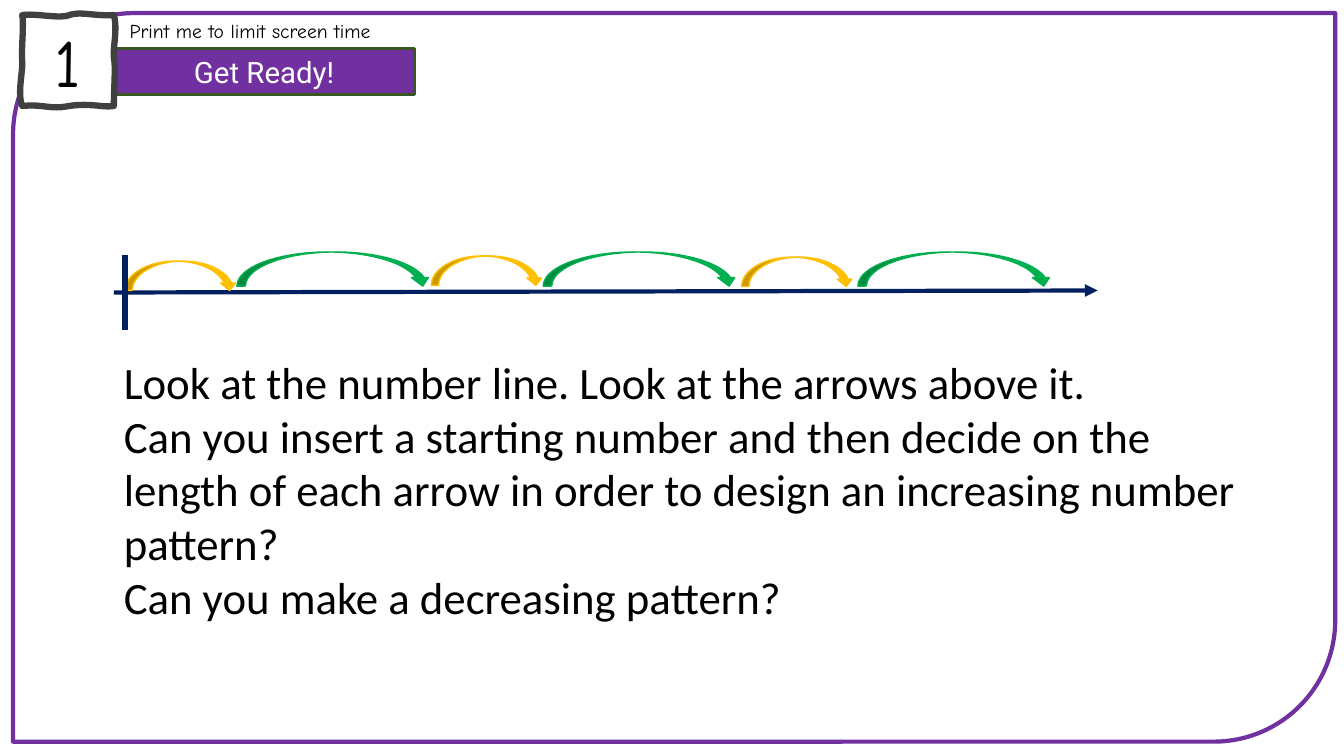
from lxml import etree
from pptx import Presentation
from pptx.dml.color import RGBColor
from pptx.enum.shapes import MSO_CONNECTOR, MSO_SHAPE
from pptx.enum.text import MSO_ANCHOR, PP_ALIGN
from pptx.oxml.ns import qn
from pptx.util import Cm, Pt

STRAIGHT = MSO_CONNECTOR.STRAIGHT
FRAME = MSO_SHAPE.ROUND_2_DIAG_RECTANGLE
RECT = MSO_SHAPE.RECTANGLE
JUMP = MSO_SHAPE.CURVED_DOWN_ARROW
CENTER, LEFT = PP_ALIGN.CENTER, PP_ALIGN.LEFT
MIDDLE = MSO_ANCHOR.MIDDLE

COLORS = {
    "purple": "7030A0",
    "dark_green": "385723",
    "charcoal": "404040",
    "navy": "002060",
    "green": "00B050",
    "amber": "FFC001",
    "white": "FFFFFF",
    "black": "000000",
}

TILE_START = (0.56, 0.38)
TILE_CURVES = [
    ((0.91, 0.33), (1.5, 0.48), (1.75, 0.38)),
    ((2.03, 0.28), (2.36, 0.41), (2.87, 0.38)),
    ((2.97, 0.74), (2.84, 1.22), (2.87, 1.45)),
    ((2.92, 1.7), (2.87, 2.13), (2.87, 2.67)),
    ((2.62, 2.72), (2.29, 2.59), (1.75, 2.67)),
    ((1.24, 2.77), (1.14, 2.62), (0.56, 2.67)),
    ((0.43, 2.36), (0.58, 1.8), (0.56, 1.55)),
    ((0.53, 1.3), (0.61, 0.61), (0.56, 0.38)),
]

SHORT, LONG = (2.82, 0.74, "amber"), (4.9, 0.86, "green")
JUMPS = [
    (3.15, 6.58, SHORT),
    (5.97, 6.35, LONG),
    (10.87, 6.45, SHORT),
    (13.69, 6.35, LONG),
    (18.69, 6.48, SHORT),
    (21.62, 6.35, LONG),
]

QUESTIONS = [
    "Look at the number line. Look at the arrows above it.",
    "Can you insert a starting number and then decide on the length of each "
    "arrow in order to design an increasing number pattern?",
    "Can you make a decreasing pattern?",
]


def bezier(a, b, c, d, t):
    u = 1 - t
    return tuple(
        Cm(u**3 * i + 3 * u * u * t * j + 3 * u * t * t * k + t**3 * m)
        for i, j, k, m in zip(a, b, c, d)
    )


class Slide:
    def __init__(self, prs):
        self.shapes = prs.slides.add_slide(prs.slide_layouts[6]).shapes

    def color(self, name):
        return RGBColor.from_string(COLORS[name])

    def style(self, s, fill, line, width):
        s.shadow.inherit = False
        if fill:
            s.fill.solid()
            s.fill.fore_color.rgb = self.color(fill)
        else:
            s.fill.background()
        s.line.color.rgb = self.color(line)
        s.line.width = Pt(width)
        return s

    def shape(self, kind, x, y, w, h, fill, line, width):
        s = self.shapes.add_shape(kind, Cm(x), Cm(y), Cm(w), Cm(h))
        return self.style(s, fill, line, width)

    def outline(self, start, curves, fill, line, width, steps=12):
        points, here = [], start
        for c1, c2, end in curves:
            points += [bezier(here, c1, c2, end, i / steps) for i in range(1, steps + 1)]
            here = end
        builder = self.shapes.build_freeform(Cm(start[0]), Cm(start[1]))
        builder.add_line_segments(points, close=True)
        return self.style(builder.convert_to_shape(), fill, line, width)

    def set_text(self, s, lines, font, size, color="black", align=LEFT):
        tf = s.text_frame
        tf.word_wrap = True
        for i, line in enumerate(lines):
            p = tf.add_paragraph() if i else tf.paragraphs[0]
            p.text = line
            p.alignment = align
            p.font.name = font
            p.font.size = Pt(size)
            p.font.color.rgb = self.color(color)

    def label(self, s, text, font, size, color):
        s.text_frame.vertical_anchor = MIDDLE
        self.set_text(s, [text], font, size, color, CENTER)

    def text(self, x, y, w, h, lines, font, size):
        s = self.shapes.add_textbox(Cm(x), Cm(y), Cm(w), Cm(h))
        self.set_text(s, lines, font, size)

    def line(self, x1, y1, x2, y2, color, width, arrow=False):
        s = self.shapes.add_connector(STRAIGHT, Cm(x1), Cm(y1), Cm(x2), Cm(y2))
        s.line.color.rgb = self.color(color)
        s.line.width = Pt(width)
        if arrow:
            ln = s._element.spPr.find(qn("a:ln"))
            etree.SubElement(ln, qn("a:tailEnd"), type="triangle")
        etree.SubElement(s._element.spPr, qn("a:effectLst"))


def main():
    prs = Presentation()
    prs.slide_width, prs.slide_height = Cm(33.87), Cm(19.05)
    slide = Slide(prs)

    slide.shape(FRAME, 0.33, 0.33, 33.32, 18.36, None, "purple", 3)
    banner = slide.shape(RECT, 2.87, 1.22, 7.57, 1.17, "purple", "dark_green", 2.25)
    slide.label(banner, "Get Ready!", "Roboto", 21, "white")
    tile = slide.outline(TILE_START, TILE_CURVES, "white", "charcoal", 4.5)
    slide.label(tile, "1", "Comic Neue", 48, "black")

    slide.line(2.87, 7.37, 27.66, 7.32, "navy", 3, arrow=True)
    for x, y, (w, h, color) in JUMPS:
        slide.shape(JUMP, x, y, w, h, color, color, 1)
    slide.text(2.87, 8.81, 28.68, 8.46, QUESTIONS, "Calibri", 32)
    slide.line(3.15, 6.43, 3.15, 8.31, "navy", 4.5)
    slide.text(3.02, 0.36, 7.98, 0.86, ["Print me to limit screen time"], "Comic Neue", 14)

    prs.save("out.pptx")


if __name__ == "__main__":
    main()
